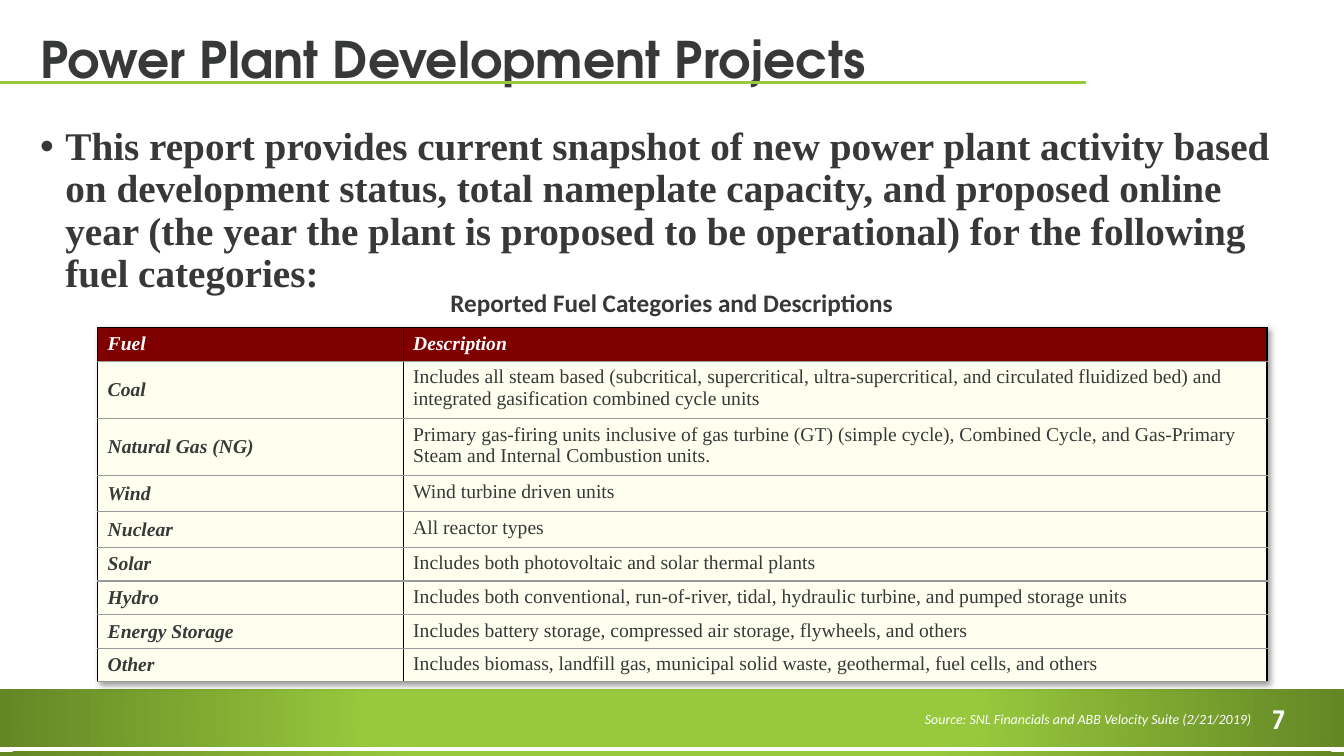
from dataclasses import dataclass
from lxml.etree import SubElement
from pptx import Presentation
from pptx.dml.color import RGBColor
from pptx.enum.shapes import MSO_CONNECTOR, MSO_SHAPE
from pptx.enum.text import MSO_ANCHOR, MSO_AUTO_SIZE, PP_ALIGN
from pptx.oxml import parse_xml
from pptx.oxml.ns import nsdecls, qn
from pptx.util import Cm, Pt


@dataclass(frozen=True)
class Theme:
    ink: str = "373838"
    white: str = "FFFFFF"
    lime: str = "98C93D"
    moss: str = "648725"
    maroon: str = "800000"
    cream: str = "FFFFEF"
    black: str = "000000"
    gray: str = "999999"
    head: str = "TeX Gyre Adventor"
    serif: str = "Times New Roman"
    sans: str = "Calibri"
    title: int = 36
    body: int = 28
    label: int = 18
    cell: int = 14
    note: int = 10


theme = Theme()


def style(para, text, face, size, color, bold=True, slant=False):
    para.text = text
    font = para.font
    font.name, font.size = face, Pt(size)
    font.bold, font.italic = bold, slant
    font.color.rgb = RGBColor.from_string(color)


def add_text(left, top, width, height, wrap=True):
    box = slide.shapes.add_textbox(Cm(left), Cm(top), Cm(width), Cm(height))
    box.text_frame.word_wrap = wrap
    return box.text_frame.paragraphs[0]


deck = Presentation()
deck.slide_width, deck.slide_height = Cm(33.87), Cm(19.05)
slide = deck.slides.add_slide(deck.slide_layouts[5])

rule = slide.shapes.add_connector(MSO_CONNECTOR.STRAIGHT, 0, Cm(2.08), Cm(27.38), Cm(2.08))
rule.line.color.rgb = RGBColor.from_string(theme.lime)
rule.line.width = Pt(1.75)
SubElement(rule._element.spPr, qn("a:effectLst"))

for top, height, stop in [(17.37, 1.45, 44), (18.95, 0.1, 37)]:
    band = slide.shapes.add_shape(MSO_SHAPE.RECTANGLE, 0, Cm(top), deck.slide_width, Cm(height))
    band.shadow.inherit = False
    band.line.fill.background()
    band._element.spPr.find(qn("a:prstGeom")).addnext(parse_xml(
        f'<a:gradFill {nsdecls("a")} rotWithShape="1"><a:gsLst>'
        f'<a:gs pos="{stop * 1000}"><a:srgbClr val="{theme.lime}"/></a:gs>'
        f'<a:gs pos="100000"><a:srgbClr val="{theme.moss}"/></a:gs></a:gsLst>'
        '<a:path path="circle"><a:fillToRect l="50000" t="50000" r="50000" b="50000"/>'
        '</a:path></a:gradFill>'))

title = slide.shapes.title
title.left, title.top, title.width, title.height = Cm(0.76), Cm(0.71), Cm(32.18), Cm(1.68)
frame = title.text_frame
frame.auto_size = MSO_AUTO_SIZE.NONE
frame.vertical_anchor = MSO_ANCHOR.BOTTOM
para = frame.paragraphs[0]
para.alignment, para.line_spacing = PP_ALIGN.LEFT, 0.9
style(para, "Power Plant Development Projects", theme.head, theme.title, theme.ink)

para = add_text(0.76, 3.07, 32.18, 4.55)
para.line_spacing = 0.9
props = para._p.get_or_add_pPr()
props.set("marL", str(Cm(0.64)))
props.set("indent", str(Cm(-0.64)))
SubElement(props, qn("a:buFont")).set("typeface", "Arial")
SubElement(props, qn("a:buChar")).set("char", "•")
style(para, "This report provides current snapshot of new power plant activity based on "
      "development status, total nameplate capacity, and proposed online year (the year "
      "the plant is proposed to be operational) for the following fuel categories:",
      theme.serif, theme.body, theme.ink)

fuels = [
    ("Fuel", "Description", 0.8),
    ("Coal", "Includes all steam based (subcritical, supercritical, ultra-supercritical, and "
     "circulated fluidized bed) and integrated gasification combined cycle units", 1.36),
    ("Natural Gas (NG)", "Primary gas-firing units inclusive of gas turbine (GT) (simple cycle), "
     "Combined Cycle, and Gas-Primary Steam and Internal Combustion units.", 1.36),
    ("Wind", "Wind turbine driven units", 0.9),
    ("Nuclear", "All reactor types", 0.9),
    ("Solar", "Includes both photovoltaic and solar thermal plants", 0.8),
    ("Hydro", "Includes both conventional, run-of-river, tidal, hydraulic turbine, "
     "and pumped storage units", 0.8),
    ("Energy Storage", "Includes battery storage, compressed air storage, flywheels, "
     "and others", 0.8),
    ("Other", "Includes biomass, landfill gas, municipal solid waste, geothermal, "
     "fuel cells, and others", 0.8),
]
total = sum(fuel[2] for fuel in fuels)
table = slide.shapes.add_table(
    len(fuels), 2, Cm(2.46), Cm(8.26), Cm(29.47), Cm(total)).table
table.horz_banding = False
table._tbl.tblPr.insert(0, parse_xml(
    f'<a:effectLst {nsdecls("a")}><a:outerShdw blurRad="50800" dist="38100" dir="2700000" '
    f'algn="tl"><a:srgbClr val="{theme.black}"><a:alpha val="40000"/></a:srgbClr>'
    '</a:outerShdw></a:effectLst>'))
for col, width in zip(table.columns, (7.7, 21.77)):
    col.width = Cm(width)

for row, (fuel, about, height) in enumerate(fuels):
    table.rows[row].height = Cm(height)
    first = row == 0
    for col, text in enumerate((fuel, about)):
        cell = table.cell(row, col)
        strong = first or col == 0
        cell.vertical_anchor = MSO_ANCHOR.TOP if first or col else MSO_ANCHOR.MIDDLE
        style(cell.text_frame.paragraphs[0], text, theme.serif, theme.cell,
              theme.white if first else theme.ink, strong, strong)
        props = cell._tc.get_or_add_tcPr()
        edges = {"L": theme.black, "R": theme.black,
                 "T": theme.black if first else theme.gray, "B": theme.gray}
        for side, color in edges.items():
            edge = SubElement(props, qn(f"a:ln{side}"), w=str(Pt(1)))
            SubElement(SubElement(edge, qn("a:solidFill")), qn("a:srgbClr"), val=color)
        cell.fill.solid()
        cell.fill.fore_color.rgb = RGBColor.from_string(theme.maroon if first else theme.cream)

para = add_text(6.81, 7.11, 20.24, 1.02)
para.alignment = PP_ALIGN.CENTER
style(para, "Reported Fuel Categories and Descriptions", theme.sans, theme.label, theme.ink)

style(add_text(23.06, 17.78, 8.86, 0.69, False),
      "Source: SNL Financials and ABB Velocity Suite (2/21/2019)",
      theme.sans, theme.note, theme.white, False, True)
style(add_text(31.8, 17.63, 1.22, 1.02, False), "7", theme.head, theme.label, theme.white)

deck.save("out.pptx")
